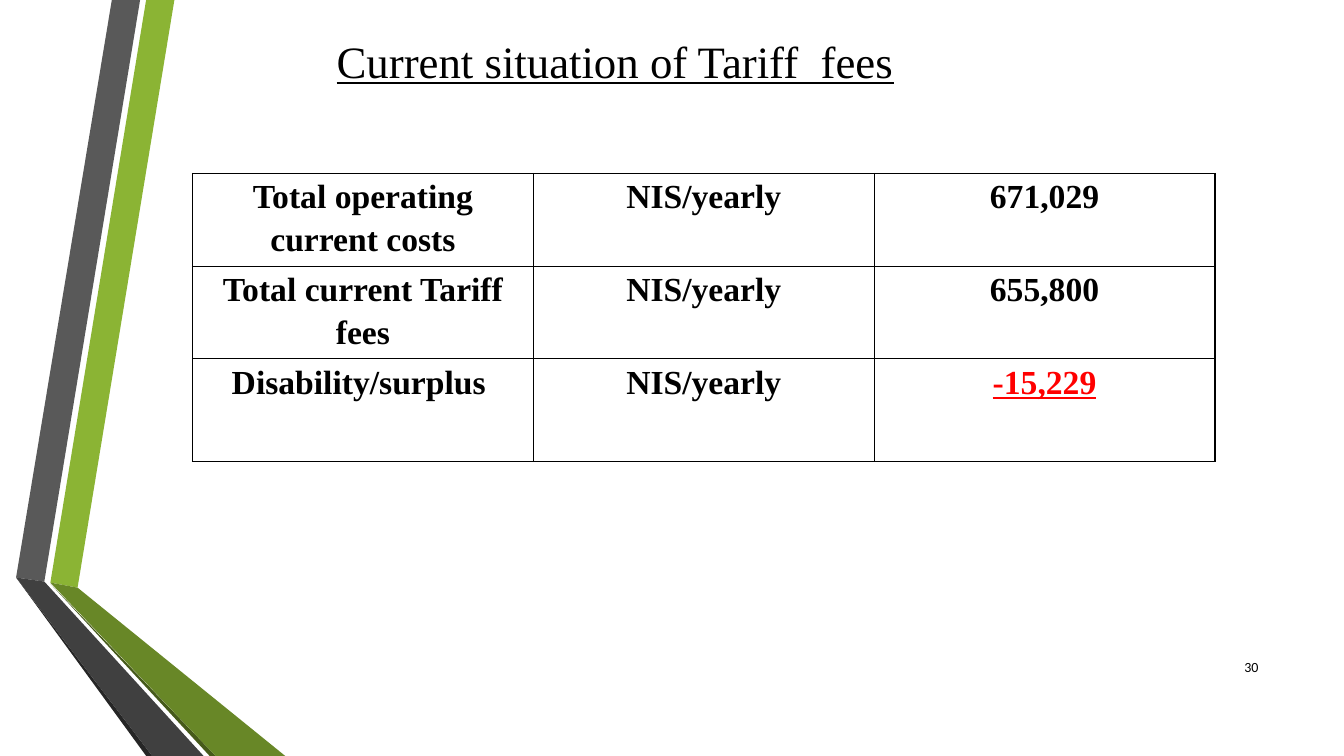
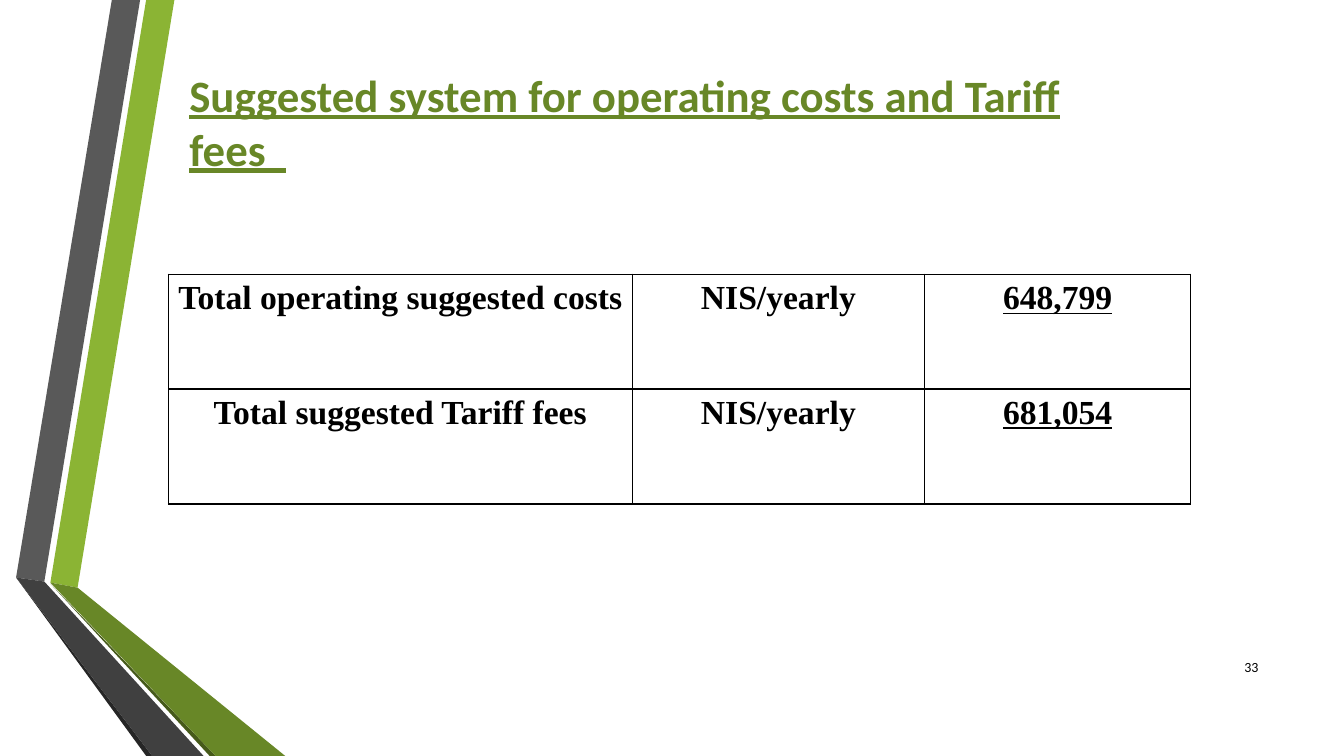
from dataclasses import dataclass

from lxml.etree import SubElement
from pptx import Presentation
from pptx.dml.color import RGBColor
from pptx.enum.text import MSO_ANCHOR as Anchor, PP_ALIGN as Align
from pptx.oxml.ns import qn
from pptx.util import Inches, Pt

SERIF, SANS = "Times New Roman", "Calibri"
BLACK = RGBColor(0x00, 0x00, 0x00)
WHITE = RGBColor(0xFF, 0xFF, 0xFF)
RED = RGBColor(0xFF, 0x00, 0x00)
LIME = RGBColor(0x8B, 0xB4, 0x34)
GREEN = RGBColor(0x68, 0x87, 0x27)
OLIVE = RGBColor(0x46, 0x5A, 0x1A)
GRAY = RGBColor(0x59, 0x59, 0x59)
CHARCOAL = RGBColor(0x40, 0x40, 0x40)
SOOT = RGBColor(0x26, 0x26, 0x26)

RIBBONS = [
    (LIME, [(0.5, 5.78), (0.77, 5.83), (1.73, 0), (1.45, 0)]),
    (GRAY, [(1.39, 0), (1.11, 0), (0.16, 5.73), (0.44, 5.77)]),
    (SOOT, [(0.16, 5.73), (1.45, 7.5), (1.51, 7.5)]),
    (OLIVE, [(0.5, 5.79), (2.08, 7.5), (2.14, 7.5)]),
    (GREEN, [(0.5, 5.78), (2.14, 7.5), (2.83, 7.5), (0.77, 5.83)]),
    (CHARCOAL, [(2.02, 7.5), (0.44, 5.77), (0.16, 5.73), (1.51, 7.5)]),
]
PAGE_NUMBER_BOX = (11.98, 6.42, 0.6, 0.4)


@dataclass
class Style:
    size: int
    font: str
    color: RGBColor = BLACK
    bold: bool = False
    underline: bool = False


PAGE_NUMBER = Style(10, SANS)
FIGURE = Style(24, SERIF, bold=True)
KEY_FIGURE = Style(24, SERIF, bold=True, underline=True)
SHORTFALL = Style(24, SERIF, RED, bold=True, underline=True)
PLAIN_TITLE = Style(32, SERIF, underline=True)
GREEN_TITLE = Style(32, SANS, GREEN, bold=True, underline=True)


def add_run(paragraph, text, style):
    run = paragraph.add_run()
    run.text = text
    font = run.font
    font.size, font.name = Pt(style.size), style.font
    font.bold, font.underline = style.bold, style.underline
    font.color.rgb = style.color


def add_text(slide, box, text, style, align=Align.LEFT, anchor=Anchor.TOP, indent=0):
    frame = slide.shapes.add_textbox(*map(Inches, box)).text_frame
    frame.word_wrap = True
    frame.vertical_anchor = anchor
    paragraph = frame.paragraphs[0]
    paragraph.alignment = align
    if indent:
        properties = paragraph._p.get_or_add_pPr()
        properties.set("marL", "0")
        properties.set("indent", str(Inches(indent)))
    add_run(paragraph, text, style)


def add_ribbons(slide):
    """Draw the folded gray and green ribbons along the left edge."""
    for color, corners in RIBBONS:
        start, *others = [(Inches(x), Inches(y)) for x, y in corners]
        builder = slide.shapes.build_freeform(*start)
        builder.add_line_segments(others, close=True)
        ribbon = builder.convert_to_shape()
        ribbon.shadow.inherit = False
        ribbon.fill.solid()
        ribbon.fill.fore_color.rgb = color
        ribbon.line.fill.background()


def outline_cell(cell):
    properties = cell._tc.get_or_add_tcPr()
    for side in ("a:lnL", "a:lnR", "a:lnT", "a:lnB"):
        border = SubElement(properties, qn(side), w=str(Pt(1)))
        fill = SubElement(border, qn("a:solidFill"))
        SubElement(fill, qn("a:srgbClr"), val=str(BLACK))


def fill_cell(cell, text, style):
    outline_cell(cell)
    cell.fill.solid()
    cell.fill.fore_color.rgb = WHITE
    cell.margin_left = cell.margin_right = Inches(0.07)
    cell.margin_top = cell.margin_bottom = 0
    paragraph = cell.text_frame.paragraphs[0]
    paragraph.alignment = Align.CENTER
    paragraph.line_spacing = 1.15
    add_run(paragraph, text, style)


def add_cost_table(slide, left, top, widths, heights, entries):
    """Each entry holds a label, its yearly amount and the amount's style."""
    table = slide.shapes.add_table(
        len(heights), len(widths), Inches(left), Inches(top),
        Inches(sum(widths)), Inches(sum(heights))).table
    table.first_row = table.horz_banding = False
    for column, width in zip(table.columns, widths):
        column.width = Inches(width)
    for row, height, (label, amount, amount_style) in zip(table.rows, heights, entries):
        row.height = Inches(height)
        texts = ((label, FIGURE), ("NIS/yearly", FIGURE), (amount, amount_style))
        for cell, (text, style) in zip(row.cells, texts):
            fill_cell(cell, text, style)


def add_base_slide(deck, number):
    slide = deck.slides.add_slide(deck.slide_layouts[6])
    add_ribbons(slide)
    add_text(slide, PAGE_NUMBER_BOX, number, PAGE_NUMBER, Align.RIGHT, Anchor.MIDDLE)
    return slide


def add_current_slide(deck):
    slide = add_base_slide(deck, "30")
    add_cost_table(slide, 1.91, 1.72, [3.38] * 3, [0.87, 0.87, 1.02], [
        ("Total operating current costs", "671,029", FIGURE),
        ("Total current Tariff fees", "655,800", FIGURE),
        ("Disability/surplus ", "-15,229", SHORTFALL),
    ])
    add_text(slide, (2.74, 0.28, 6.86, 0.64), "Current situation of Tariff  fees",
             PLAIN_TITLE, anchor=Anchor.MIDDLE, indent=0.5)


def add_suggested_slide(deck):
    slide = add_base_slide(deck, "33")
    add_cost_table(slide, 1.67, 2.72, [4.6, 2.9, 2.64], [1.14] * 2, [
        ("Total operating suggested costs", "648,799", KEY_FIGURE),
        ("Total suggested Tariff fees", "681,054", KEY_FIGURE),
    ])
    add_text(slide, (1.78, 0.62, 9.6, 1.18),
             "Suggested system for operating costs and Tariff fees  ", GREEN_TITLE)


def main():
    deck = Presentation()
    deck.slide_width, deck.slide_height = Inches(13.33), Inches(7.5)
    add_current_slide(deck)
    add_suggested_slide(deck)
    deck.save("out.pptx")


if __name__ == "__main__":
    main()
